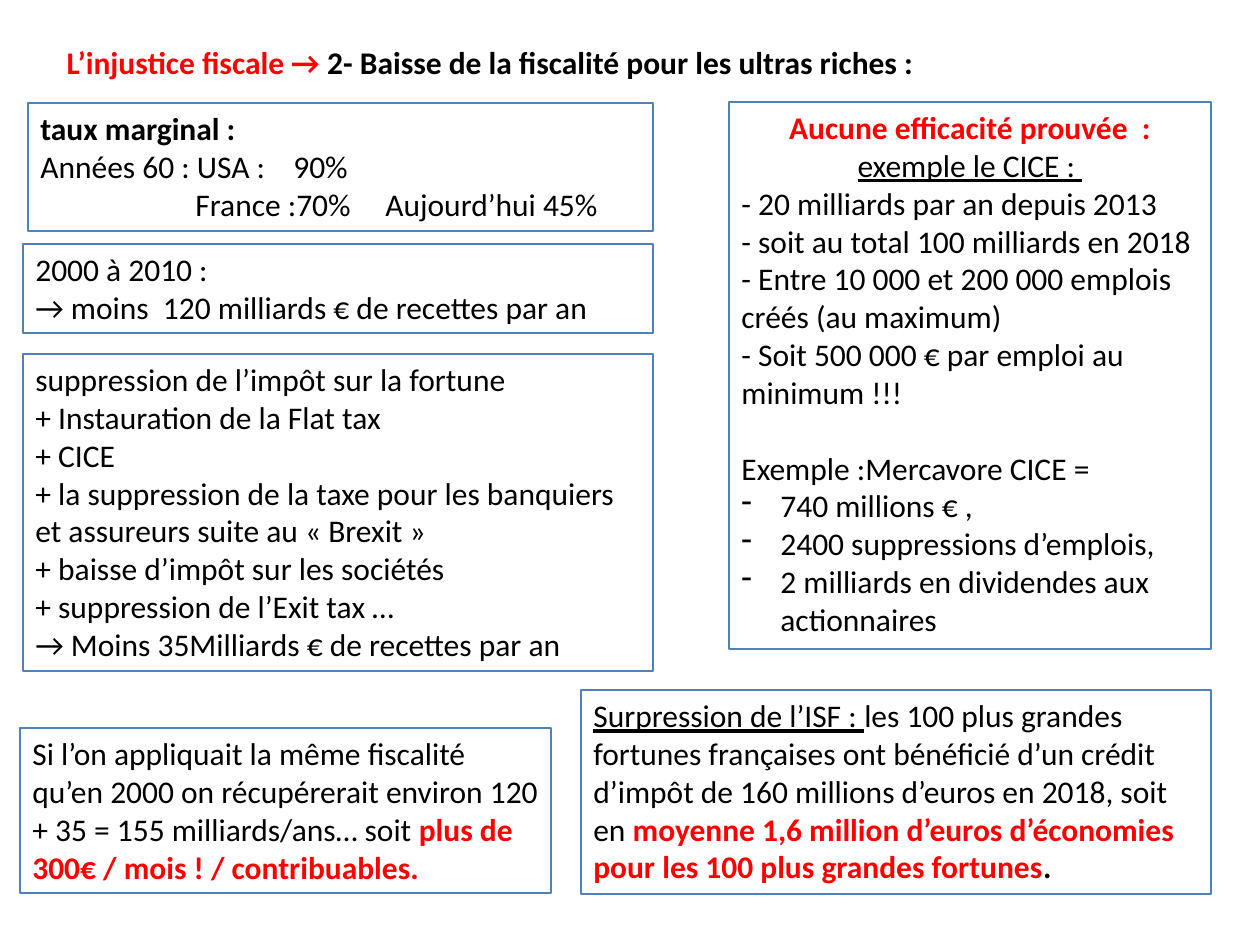
from lxml import etree
from pptx import Presentation
from pptx.dml.color import RGBColor
from pptx.enum import shapes, text
from pptx.oxml.ns import qn
from pptx.util import Emu, Pt

COLORS = {"ink": "000000", "accent": "FF0000", "border": "4F81BD"}
PLAIN = {"color": "ink", "bold": False, "underline": False}
BOLD = {**PLAIN, "bold": True}
UNDER = {**PLAIN, "underline": True}
RED = {**BOLD, "color": "accent"}
TITLE = ((54, 37, 890, 50), [
    {"runs": [("L’injustice fiscale\u00a0→ ", RED),
              ("2- Baisse de la fiscalité pour les ultras riches\u00a0: ", BOLD)]},
])
BOXES = [
    ((23, 244, 630, 89), ["2000 à 2010 : ", "→ moins  120 milliards € de recettes par an"]),
    ((23, 354, 630, 317), [
        "suppression de l’impôt sur la fortune ",
        "+ Instauration de la Flat tax ",
        "+ CICE ",
        "+ la suppression de la taxe pour les banquiers et assureurs suite au «\u00a0Brexit\u00a0» ",
        "+ baisse d’impôt sur les sociétés ",
        "+ suppression de l’Exit tax … ",
        "→ Moins 35Milliards € de recettes par an",
    ]),
    ((20, 728, 531, 165), [
        {"runs": [("Si l’on appliquait la même fiscalité qu’en 2000 on récupérerait environ "
                   "120 + 35 = 155 milliards/ans… soit ", PLAIN),
                  ("plus de 300€ / mois\u00a0! / contribuables. ", RED)]},
    ]),
    ((729, 102, 482, 547), [
        {"runs": [("Aucune efficacité prouvée\u00a0 : ", RED), ("exemple le CICE\u00a0: ", UNDER)],
         "format": {"alignment": text.PP_ALIGN.CENTER}},
        "- 20 milliards par an depuis 2013 ",
        "- soit au total 100 milliards en 2018",
        "- Entre 10\u00a0000 et 200\u00a0000 emplois créés (au maximum) ",
        "- Soit 500\u00a0000 € par emploi\u00a0au minimum !!!",
        {"runs": [("Exemple\u00a0:Mercavore\u00a0CICE = ", PLAIN)], "format": {"space_before": Pt(21.7)}},
        {"runs": [("740 millions € , ", PLAIN)], "bullet": "-"},
        {"runs": [("2400 suppressions d’emplois, ", PLAIN)], "bullet": "-"},
        {"runs": [("2 milliards en dividendes aux actionnaires ", PLAIN)], "bullet": "-"},
    ]),
    ((581, 690, 630, 204), [
        {"runs": [("Surpression de l’ISF\u00a0: ", UNDER),
                  ("les 100\u00a0plus grandes fortunes françaises ont bénéficié d’un crédit d’impôt "
                   "de 160\u00a0millions d’euros en 2018, soit en ", PLAIN),
                  ("moyenne 1,6\u00a0million d’euros d’économies pour les 100 plus grandes fortunes", RED),
                  (". ", BOLD)]},
    ]),
    ((28, 103, 625, 128), [
        {"runs": [("taux marginal :", BOLD)]},
        {"runs": [("Années 60 : USA :\t90% ", PLAIN)], "tabs": [253]},
        {"runs": [("\tFrance :70%\tAujourd’hui 45% ", PLAIN)], "tabs": [155, 345]},
    ]),
]
HANGING = 39


def px(n):
    return Emu(round(n * 914400 / 126))


def rgb(name):
    return RGBColor.from_string(COLORS[name])


def assign(target, values):
    for name, value in values.items():
        setattr(target, name, value)


def place(sp, box):
    assign(sp, dict(zip(("left", "top", "width", "height"), map(px, box))))


def write(tf, paragraphs, wrap):
    assign(tf, {"word_wrap": wrap, "auto_size": text.MSO_AUTO_SIZE.SHAPE_TO_FIT_TEXT,
                "vertical_anchor": text.MSO_ANCHOR.TOP})
    for i, item in enumerate(paragraphs):
        if isinstance(item, str):
            item = {"runs": [(item, PLAIN)]}
        p = tf.add_paragraph() if i else tf.paragraphs[0]
        assign(p, {"alignment": text.PP_ALIGN.LEFT, "space_before": Pt(0), **item.get("format", {})})
        pPr = p._p.get_or_add_pPr()
        if "bullet" in item:
            pPr.set("marL", str(px(HANGING)))
            pPr.set("indent", str(-px(HANGING)))
            etree.SubElement(pPr, qn("a:buFontTx"))
            etree.SubElement(pPr, qn("a:buChar"), char=item["bullet"])
        if "tabs" in item:
            tabs = etree.SubElement(pPr, qn("a:tabLst"))
            for stop in item["tabs"]:
                etree.SubElement(tabs, qn("a:tab"), pos=str(px(stop)), algn="l")
        for words, style in item["runs"]:
            r = p.add_run()
            r.text = words
            assign(r.font, {"name": "Calibri", "size": Pt(18),
                            "bold": style["bold"], "underline": style["underline"]})
            r.font.color.rgb = rgb(style["color"])


prs = Presentation()
assign(prs, {"slide_width": px(1260), "slide_height": px(945)})
s = prs.slides.add_slide(prs.slide_layouts[5])
box, paragraphs = TITLE
place(s.shapes.title, box)
write(s.shapes.title.text_frame, paragraphs, False)

for box, paragraphs in BOXES:
    sp = s.shapes.add_shape(shapes.MSO_SHAPE.RECTANGLE, *map(px, box))
    sp.shadow.inherit = False
    sp.fill.background()
    sp.line.color.rgb = rgb("border")
    sp.line.width = Pt(0.75)
    write(sp.text_frame, paragraphs, True)

prs.save("out.pptx")
